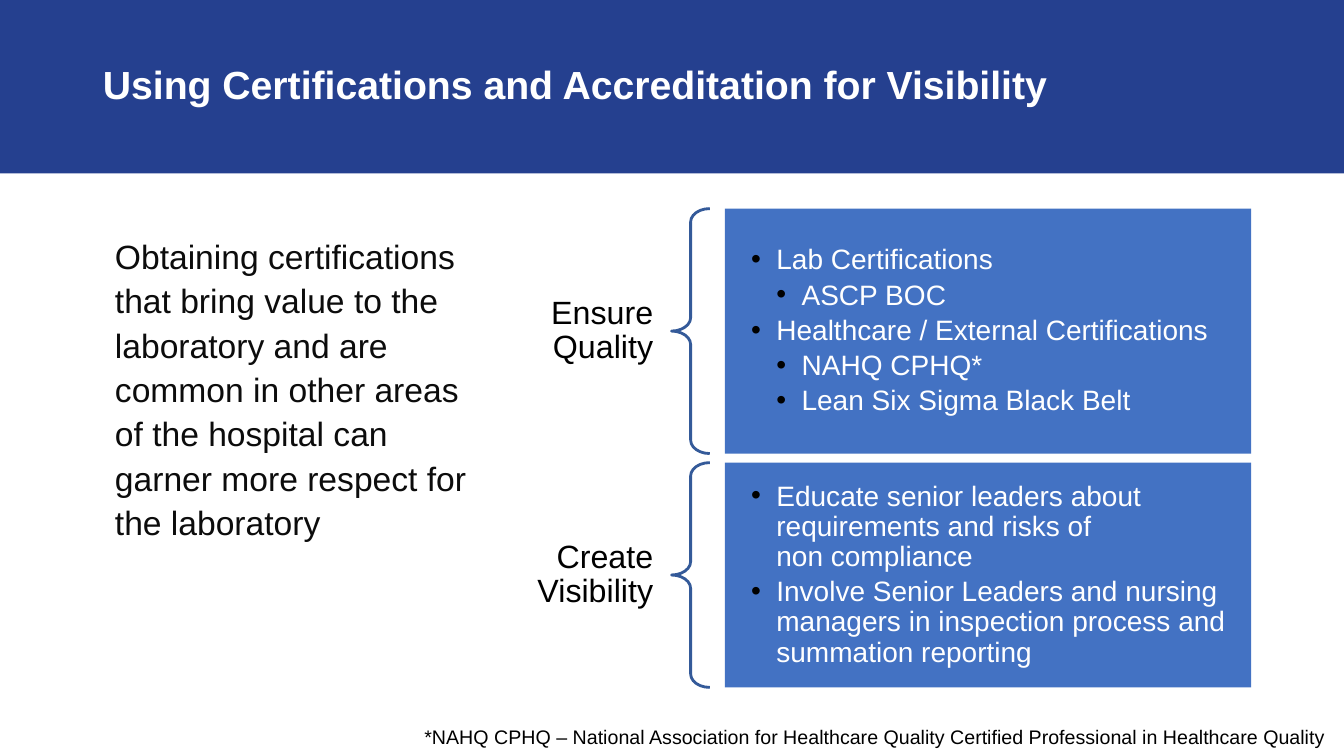
"""Build a slide on certifications and accreditation for laboratory visibility."""
from dataclasses import dataclass

from lxml import etree
from pptx import Presentation
from pptx import util as u
from pptx.dml import color
from pptx.enum import shapes, text
from pptx.oxml import ns


@dataclass(frozen=True)
class Theme:
    font: str = "Arial"
    navy: str = "25408F"
    blue: str = "4372C3"
    line: str = "345A99"
    white: str = "FFFFFF"
    ink: str = "0C0C0C"
    black: str = "000000"
    head: int = 28
    body: int = 24
    label: int = 23
    item: int = 20
    note: int = 14


theme = Theme()
rgb = color.RGBColor.from_string


def place(shape, left, top, width, height):
    shape.left, shape.top = u.Inches(left), u.Inches(top)
    shape.width, shape.height = u.Inches(width), u.Inches(height)


def style(shape, size, tint, pads, space=1.0, align=text.PP_ALIGN.LEFT, bold=False):
    frame = shape.text_frame
    frame.word_wrap = True
    frame.auto_size = text.MSO_AUTO_SIZE.NONE
    frame.vertical_anchor = text.MSO_ANCHOR.MIDDLE
    frame.margin_left, frame.margin_top, frame.margin_right, frame.margin_bottom = map(u.Inches, pads)
    for para in frame.paragraphs:
        para.alignment = align
        para.line_spacing = space
        para.space_before = u.Pt(0)
        for run in para.runs:
            run.font.name = theme.font
            run.font.size = u.Pt(size)
            run.font.bold = bold
            run.font.color.rgb = rgb(tint)


deck = Presentation()
deck.slide_width, deck.slide_height = u.Inches(13.33), u.Inches(7.5)
slide = deck.slides.add_slide(deck.slide_layouts[1])
plain = (0.1, 0.05, 0.1, 0.05)

banner = slide.shapes.add_shape(shapes.MSO_SHAPE.RECTANGLE, 0, 0, deck.slide_width, u.Inches(1.72))
banner.shadow.inherit = False
banner.fill.solid()
banner.fill.fore_color.rgb = rgb(theme.navy)
banner.line.fill.background()
slide.shapes.title.element.addprevious(banner.element)

title = slide.shapes.title
place(title, 0.92, 0.14, 11.5, 1.45)
title.text_frame.text = "Using Certifications and Accreditation for Visibility"
style(title, theme.head, theme.white, plain, 0.9, bold=True)

body = slide.placeholders[1]
place(body, 0.92, 2, 3.83, 3.68)
body.text_frame.text = (
    "Obtaining certifications that bring value to the laboratory and are common "
    "in other areas of the hospital can garner more respect for the laboratory"
)
props = body.text_frame.paragraphs[0]._p.get_or_add_pPr()
props.set("marL", str(u.Inches(0.12)))
props.set("indent", "0")
etree.SubElement(props, ns.qn("a:buNone"))
style(body, theme.body, theme.ink, plain, 1.1)

groups = [
    ("Ensure Quality", 2.07, 2.43, [
        (0, "Lab Certifications"),
        (1, "ASCP BOC"),
        (0, "Healthcare / External Certifications"),
        (1, "NAHQ CPHQ*"),
        (1, "Lean Six Sigma Black Belt"),
    ]),
    ("Create Visibility", 4.59, 2.23, [
        (0, "Educate senior leaders about requirements and risks of\vnon compliance"),
        (0, "Involve Senior Leaders and nursing managers in inspection process and summation reporting"),
    ]),
]
for name, top, height, items in groups:
    label = slide.shapes.add_textbox(0, 0, 0, 0)
    place(label, 4.74, top + (height - 0.79) / 2, 1.92, 0.79)
    label.text_frame.text = name
    style(label, theme.label, theme.black, (0.18, 0.06, 0.18, 0.06), 0.9, text.PP_ALIGN.RIGHT)

    brace = slide.shapes.add_shape(shapes.MSO_SHAPE.LEFT_BRACE, 0, 0, 0, 0)
    place(brace, 6.66, top, 0.38, height)
    brace.adjustments[0], brace.adjustments[1] = 0.35, 0.5
    brace.shadow.inherit = False
    brace.fill.background()
    brace.line.color.rgb = rgb(theme.line)
    brace.line.width = u.Pt(2)

    panel = slide.shapes.add_shape(shapes.MSO_SHAPE.RECTANGLE, 0, 0, 0, 0)
    place(panel, 7.19, top, 5.22, height)
    panel.shadow.inherit = False
    panel.fill.solid()
    panel.fill.fore_color.rgb = rgb(theme.blue)
    panel.line.fill.background()
    frame = panel.text_frame
    for index, (level, words) in enumerate(items):
        para = frame.add_paragraph() if index else frame.paragraphs[0]
        para.text = words
        para.level = level
        props = para._p.get_or_add_pPr()
        props.set("marL", str(u.Inches(0.25 * (level + 1))))
        props.set("indent", str(u.Inches(-0.25)))
        tint = etree.SubElement(props, ns.qn("a:buClr"))
        etree.SubElement(tint, ns.qn("a:srgbClr"), val=theme.black)
        etree.SubElement(props, ns.qn("a:buFont"), typeface=theme.font)
        etree.SubElement(props, ns.qn("a:buChar"), char="•")
    style(panel, theme.item, theme.white, (0.26, 0.1, 0, 0.1), 0.9)
    for para in frame.paragraphs[1:]:
        para.space_before = u.Pt(3.5)

note = slide.shapes.add_textbox(0, 0, 0, 0)
place(note, 4.11, 7.14, 9.22, 0.34)
note.text_frame.text = (
    "*NAHQ CPHQ – National Association for Healthcare Quality "
    "Certified Professional in Healthcare Quality"
)
style(note, theme.note, theme.black, plain)

deck.save("out.pptx")
